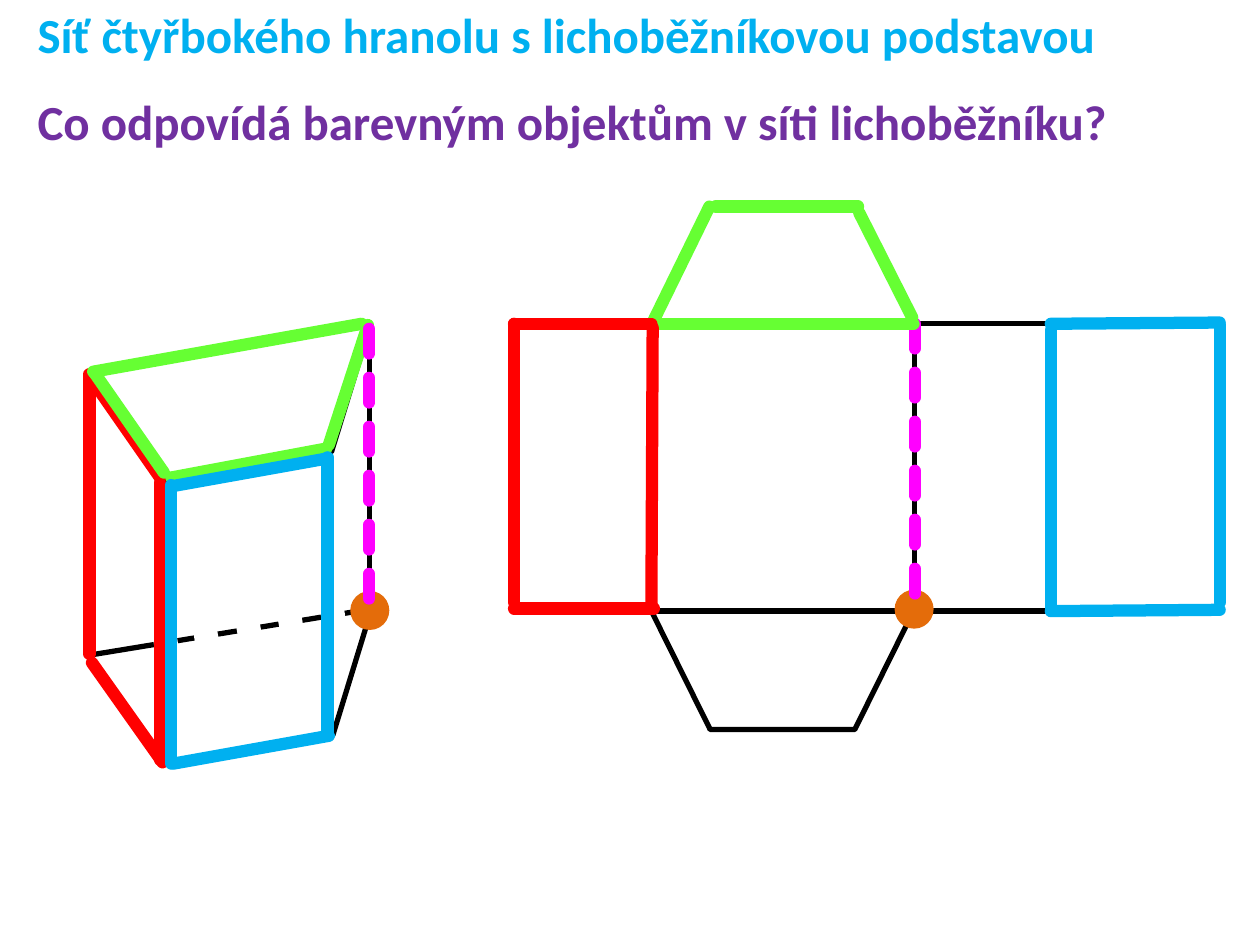
from dataclasses import dataclass
from itertools import accumulate

from lxml.etree import SubElement
from pptx import Presentation
from pptx.dml.color import RGBColor
from pptx.enum.dml import MSO_LINE
from pptx.enum.shapes import MSO_CONNECTOR, MSO_SHAPE
from pptx.enum.text import MSO_AUTO_SIZE, PP_ALIGN
from pptx.oxml.ns import qn
from pptx.util import Inches, Pt

COLOURS = {
    "black": "000000",
    "white": "FFFFFF",
    "red": "FF0000",
    "green": "66FF33",
    "blue": "00B0F0",
    "magenta": "FF00FF",
    "orange": "E46C0A",
    "purple": "7030A0",
}
THIN, THICK = 3, 7
TILT = 170.7
NET_TOP, NET_HEIGHT = 2.57, 2.28
HEADING_FORMAT = {"name": "Calibri", "size": Pt(28), "bold": True}
FRAME_FORMAT = {"word_wrap": True, "auto_size": MSO_AUTO_SIZE.SHAPE_TO_FIT_TEXT}


@dataclass(frozen=True)
class Heading:
    text: str
    top: float
    width: float
    colour: str


@dataclass(frozen=True)
class Figure:
    kind: MSO_SHAPE
    left: float
    top: float
    width: float
    height: float
    rotation: float = 0
    fill: str | None = None


@dataclass(frozen=True)
class Edge:
    start: tuple[float, float]
    end: tuple[float, float]
    colour: str = "black"
    weight: float = THICK
    dashed: bool = False


def rgb(name: str) -> RGBColor:
    return RGBColor.from_string(COLOURS[name])


def apply_format(target, values: dict) -> None:
    for name, value in values.items():
        setattr(target, name, value)


def draw_heading(shapes, heading: Heading) -> None:
    box = shapes.add_textbox(
        Inches(0.2), Inches(heading.top), Inches(heading.width), Inches(0.57)
    )
    apply_format(box.text_frame, FRAME_FORMAT)
    paragraph = box.text_frame.paragraphs[0]
    paragraph.alignment = PP_ALIGN.JUSTIFY
    run = paragraph.add_run()
    run.text = heading.text
    apply_format(run.font, HEADING_FORMAT)
    run.font.color.rgb = rgb(heading.colour)


def draw_figure(shapes, figure: Figure) -> None:
    shape = shapes.add_shape(
        figure.kind,
        *map(Inches, (figure.left, figure.top, figure.width, figure.height)),
    )
    shape.shadow.inherit = False
    shape.rotation = figure.rotation
    if figure.kind == MSO_SHAPE.TRAPEZOID:
        shape.adjustments[0] = 0.496
    if figure.fill:
        shape.fill.solid()
        shape.fill.fore_color.rgb = rgb(figure.fill)
        shape.line.fill.background()
    else:
        shape.fill.background()
        shape.line.color.rgb = rgb("black")
        shape.line.width = Pt(THIN)


def draw_edge(shapes, edge: Edge) -> None:
    connector = shapes.add_connector(
        MSO_CONNECTOR.STRAIGHT, *map(Inches, (*edge.start, *edge.end))
    )
    connector.line.color.rgb = rgb(edge.colour)
    connector.line.width = Pt(edge.weight)
    if edge.dashed:
        connector.line.dash_style = MSO_LINE.SQUARE_DOT
        preset = connector.line._ln.find(qn("a:prstDash"))
        preset.set("val", "sysDash")
    if edge.weight == THICK:
        connector.line._ln.set("cap", "rnd")
    SubElement(connector._element.spPr, qn("a:effectLst"))


def draw_all(shapes, items: list) -> None:
    draw = {Heading: draw_heading, Figure: draw_figure, Edge: draw_edge}
    for item in items:
        draw[type(item)](shapes, item)


def edges(colour: str, *ends: tuple[float, float, float, float]) -> list[Edge]:
    return [Edge((x1, y1), (x2, y2), colour) for x1, y1, x2, y2 in ends]


PRISM = [
    *(
        Figure(MSO_SHAPE.TRAPEZOID, left, top, 2.27, 0.94, TILT)
        for left, top in ((0.76, 2.76), (0.77, 5.01))
    ),
    *(
        Figure(MSO_SHAPE.RECTANGLE, left, top, 0.19, 0.09, TILT + 179.6, "white")
        for left, top in ((1.22, 5.05), (1.54, 5), (1.88, 4.95), (2.21, 4.89), (2.55, 4.85))
    ),
    *(
        Edge((x, top), (x, top + NET_HEIGHT), weight=THIN)
        for x, top in ((0.7, 2.93), (1.32, 3.77), (2.62, 3.56), (2.93, 2.57))
    ),
]

side_widths = [1.1, 2.07, 1.08, 1.35]
side_lefts = accumulate(side_widths[:-1], initial=4.09)
NET = [
    *(
        Figure(MSO_SHAPE.RECTANGLE, left, NET_TOP, width, NET_HEIGHT)
        for left, width in zip(side_lefts, side_widths)
    ),
    Figure(MSO_SHAPE.TRAPEZOID, 5.17, NET_TOP + NET_HEIGHT, 2.08, 0.94, 180),
    Figure(MSO_SHAPE.TRAPEZOID, 5.17, 1.64, 2.08, 0.94),
]

PRISM_MARKS = [
    *edges("red", (0.71, 2.97, 0.71, 5.19), (1.27, 3.83, 1.27, 6.03),
           (0.73, 5.26, 1.29, 6.05), (0.72, 3, 1.27, 3.79)),
    *edges("green", (0.74, 2.95, 2.87, 2.57), (1.3, 3.75, 0.75, 2.96),
           (2.61, 3.53, 2.92, 2.58), (1.36, 3.79, 2.59, 3.56)),
    *edges("blue", (1.36, 3.85, 1.36, 6.06), (2.6, 3.63, 2.6, 5.84),
           (2.59, 3.64, 1.36, 3.86), (2.61, 5.84, 1.38, 6.06)),
]

MATCHING_PARTS = [
    *(
        Figure(MSO_SHAPE.OVAL, left, top, 0.31, 0.31, fill="orange")
        for left, top in ((2.78, 4.69), (7.1, 4.68))
    ),
    *(
        Edge((x, top), (x, top + 2.2), "magenta", dashed=True)
        for x, top in ((2.93, 2.61), (7.26, 2.57))
    ),
]

NET_MARKS = [
    *edges("green", (5.2, 2.57, 7.25, 2.57), (5.17, 2.58, 5.63, 1.64),
           (7.24, 2.52, 6.82, 1.69), (5.68, 1.64, 6.81, 1.64)),
    *edges("red", (4.08, 4.83, 5.19, 4.83), (4.08, 2.57, 4.08, 4.78),
           (4.08, 2.57, 5.17, 2.57), (5.18, 2.6, 5.17, 4.83)),
    *edges("blue", (9.68, 4.84, 8.34, 4.85), (8.34, 2.62, 8.34, 4.83),
           (9.68, 2.56, 8.34, 2.57), (9.68, 2.58, 9.68, 4.78)),
]

TITLE = Heading("Síť čtyřbokého hranolu s lichoběžníkovou podstavou", -0.01, 9.53, "blue")
QUESTION = Heading("Co odpovídá barevným objektům v síti lichoběžníku?", 0.68, 8.9, "purple")


def main() -> None:
    presentation = Presentation()
    presentation.slide_width = Inches(10)
    presentation.slide_height = Inches(7.5)
    slide = presentation.slides.add_slide(presentation.slide_layouts[6])
    draw_all(slide.shapes, [TITLE])
    draw_all(slide.shapes.add_group_shape().shapes, PRISM)
    draw_all(slide.shapes, [*NET, *PRISM_MARKS, *MATCHING_PARTS, QUESTION, *NET_MARKS])
    presentation.save("out.pptx")


if __name__ == "__main__":
    main()
